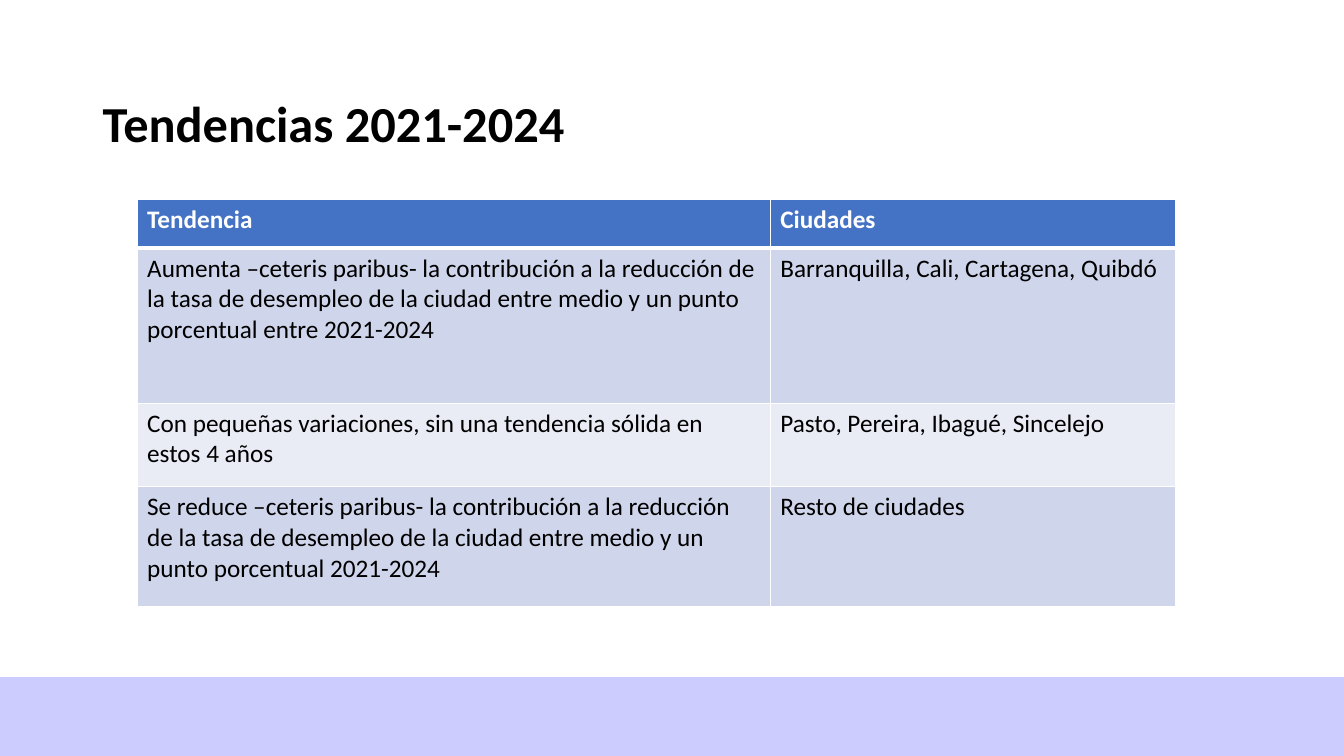
"""Build the slide on 2021-2024 trends: a title, a table and a footer band."""
from lxml import etree
from pptx import Presentation
from pptx.dml.color import RGBColor
from pptx.enum.shapes import MSO_SHAPE
from pptx.enum.text import MSO_ANCHOR
from pptx.oxml.ns import qn
from pptx.util import Inches, Pt

RECT = MSO_SHAPE.RECTANGLE
MIDDLE = MSO_ANCHOR.MIDDLE
WHITE = RGBColor(0xFF, 0xFF, 0xFF)
BLACK = RGBColor(0x00, 0x00, 0x00)
LILAC = RGBColor(0xCC, 0xCC, 0xFF)
BLUE = RGBColor(0x44, 0x72, 0xC4)
BANDS = [RGBColor(0xE9, 0xEB, 0xF5), RGBColor(0xCF, 0xD5, 0xEA)]

COLS = [6.28, 4.02]
ROWS = [0.48, 1.54, 0.83, 1.19]
TRENDS = [
    ("Tendencia", "Ciudades"),
    ("Aumenta –ceteris paribus- la contribución a la reducción de la tasa de "
     "desempleo de la ciudad entre medio y un punto porcentual entre 2021-2024",
     "Barranquilla, Cali, Cartagena, Quibdó"),
    ("Con pequeñas variaciones, sin una tendencia sólida en estos 4 años",
     "Pasto, Pereira, Ibagué, Sincelejo"),
    ("Se reduce –ceteris paribus- la contribución a la reducción de la tasa de "
     "desempleo de la ciudad entre medio y un punto porcentual 2021-2024",
     "Resto de ciudades"),
]


def set_font(p, size, color, bold):
    p.font.name = "Calibri"
    p.font.size = Pt(size)
    p.font.bold = bold
    p.font.color.rgb = color


def add_border(cell, side, points):
    ln = etree.SubElement(cell._tc.get_or_add_tcPr(), qn("a:ln" + side), w=str(Pt(points)))
    fill = etree.SubElement(ln, qn("a:solidFill"))
    etree.SubElement(fill, qn("a:srgbClr"), val=str(WHITE))


prs = Presentation()
prs.slide_width = Inches(13.33)
prs.slide_height = Inches(7.5)
s = prs.slides.add_slide(prs.slide_layouts[6])

band = s.shapes.add_shape(RECT, 0, Inches(6.72), prs.slide_width, Inches(0.78))
band.shadow.inherit = False
band.fill.solid()
band.fill.fore_color.rgb = LILAC
band.line.color.rgb = LILAC
band.line.width = Pt(1)

table = s.shapes.add_table(len(ROWS), len(COLS), Inches(1.36), Inches(1.98),
                           Inches(sum(COLS)), Inches(sum(ROWS))).table
for column, width in zip(table.columns, COLS):
    column.width = Inches(width)
for i, (row, height) in enumerate(zip(table.rows, ROWS)):
    row.height = Inches(height)
    header = i == 0
    for cell, text in zip(row.cells, TRENDS[i]):
        for side in "LRTB":
            heavy = (header and side == "B") or (i == 1 and side == "T")
            add_border(cell, side, 3 if heavy else 1)
        cell.fill.solid()
        cell.fill.fore_color.rgb = BLUE if header else BANDS[i % 2]
        cell.text = text
        set_font(cell.text_frame.paragraphs[0], 18, WHITE if header else BLACK, header)

title = s.shapes.add_textbox(Inches(0.92), Inches(0.53), Inches(11.5), Inches(1.45))
tf = title.text_frame
tf.word_wrap = True
tf.vertical_anchor = MIDDLE
p = tf.paragraphs[0]
p.text = "Tendencias 2021-2024"
p.line_spacing = 0.9
set_font(p, 36, BLACK, True)

prs.save("out.pptx")
